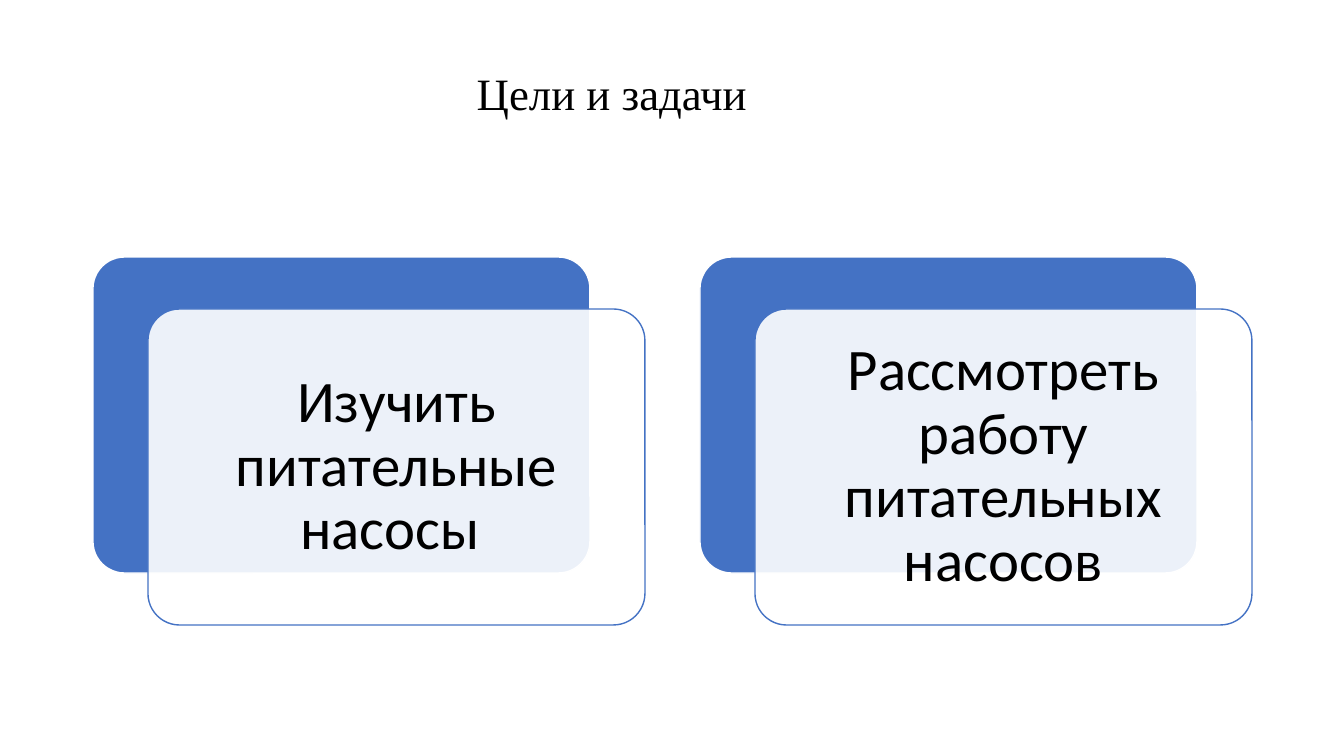
from lxml import etree
from pptx import Presentation
from pptx.dml.color import RGBColor
from pptx.enum.shapes import MSO_SHAPE
from pptx.enum.text import MSO_ANCHOR, PP_ALIGN
from pptx.oxml.ns import qn
from pptx.util import Emu, Pt

TITLE = "Цели и задачи "
GOALS = ["Изучить питательные насосы ", "Рассмотреть работу питательных насосов"]
COLORS = {"blue": "4472C4", "white": "FFFFFF", "text": "000000"}

ROUNDED = MSO_SHAPE.ROUNDED_RECTANGLE
MIDDLE = MSO_ANCHOR.MIDDLE
CENTER = PP_ALIGN.CENTER

# Lengths in px
SLIDE_SIZE = (1344, 756)
TITLE_BOX = (418, 40, 399, 113)
CARD_LEFT, CARD_TOP, CARD_WIDTH, CARD_HEIGHT = 93, 257, 497, 316
CARD_STEP = 607
FRONT_SHIFT_X, FRONT_SHIFT_Y = 55, 52
TEXT_INSET = 9
TEXT_MARGIN = 17


def px(length):
    return Emu(round(length * 914400 / 100.8))


def color(name):
    return RGBColor.from_string(COLORS[name])


def add_panel(shapes, left, top, fill, line):
    panel = shapes.add_shape(
        ROUNDED, px(left), px(top), px(CARD_WIDTH), px(CARD_HEIGHT))
    panel.adjustments[0] = 0.1
    panel.shadow.inherit = False
    panel.fill.solid()
    panel.fill.fore_color.rgb = color(fill)
    panel.line.color.rgb = color(line)
    panel.line.width = Pt(1)
    return panel


def set_opacity(shape, percent):
    rgb = shape.fill._xPr.find(qn("a:solidFill")).find(qn("a:srgbClr"))
    etree.SubElement(rgb, qn("a:alpha")).set("val", str(percent * 1000))


def write_text(box, text, font, size):
    frame = box.text_frame
    frame.word_wrap = True
    frame.vertical_anchor = MIDDLE
    frame.text = text
    para = frame.paragraphs[0]
    para.alignment = CENTER
    para.line_spacing = 0.9
    para.font.name = font
    para.font.size = Pt(size)
    para.font.color.rgb = color("text")


def add_card(shapes, left, text):
    """Blue back panel, translucent front panel and the goal's text."""
    add_panel(shapes, left, CARD_TOP, "blue", "white")
    front_left, front_top = left + FRONT_SHIFT_X, CARD_TOP + FRONT_SHIFT_Y
    front = add_panel(shapes, front_left, front_top, "white", "blue")
    set_opacity(front, 90)
    box = shapes.add_textbox(
        px(front_left + TEXT_INSET), px(front_top + TEXT_INSET),
        px(CARD_WIDTH - 2 * TEXT_INSET), px(CARD_HEIGHT - 2 * TEXT_INSET))
    frame = box.text_frame
    frame.margin_left = frame.margin_right = px(TEXT_MARGIN)
    frame.margin_top = frame.margin_bottom = px(TEXT_MARGIN)
    write_text(box, text, "Calibri", 42)


def main():
    deck = Presentation()
    deck.slide_width, deck.slide_height = map(px, SLIDE_SIZE)
    page = deck.slides.add_slide(deck.slide_layouts[5])

    title = page.shapes.title
    title.left, title.top, title.width, title.height = map(px, TITLE_BOX)
    write_text(title, TITLE, "Times New Roman", 32)

    cards = page.shapes.add_group_shape()
    for index, goal in enumerate(GOALS):
        add_card(cards.shapes, CARD_LEFT + index * CARD_STEP, goal)

    deck.save("out.pptx")


if __name__ == "__main__":
    main()
